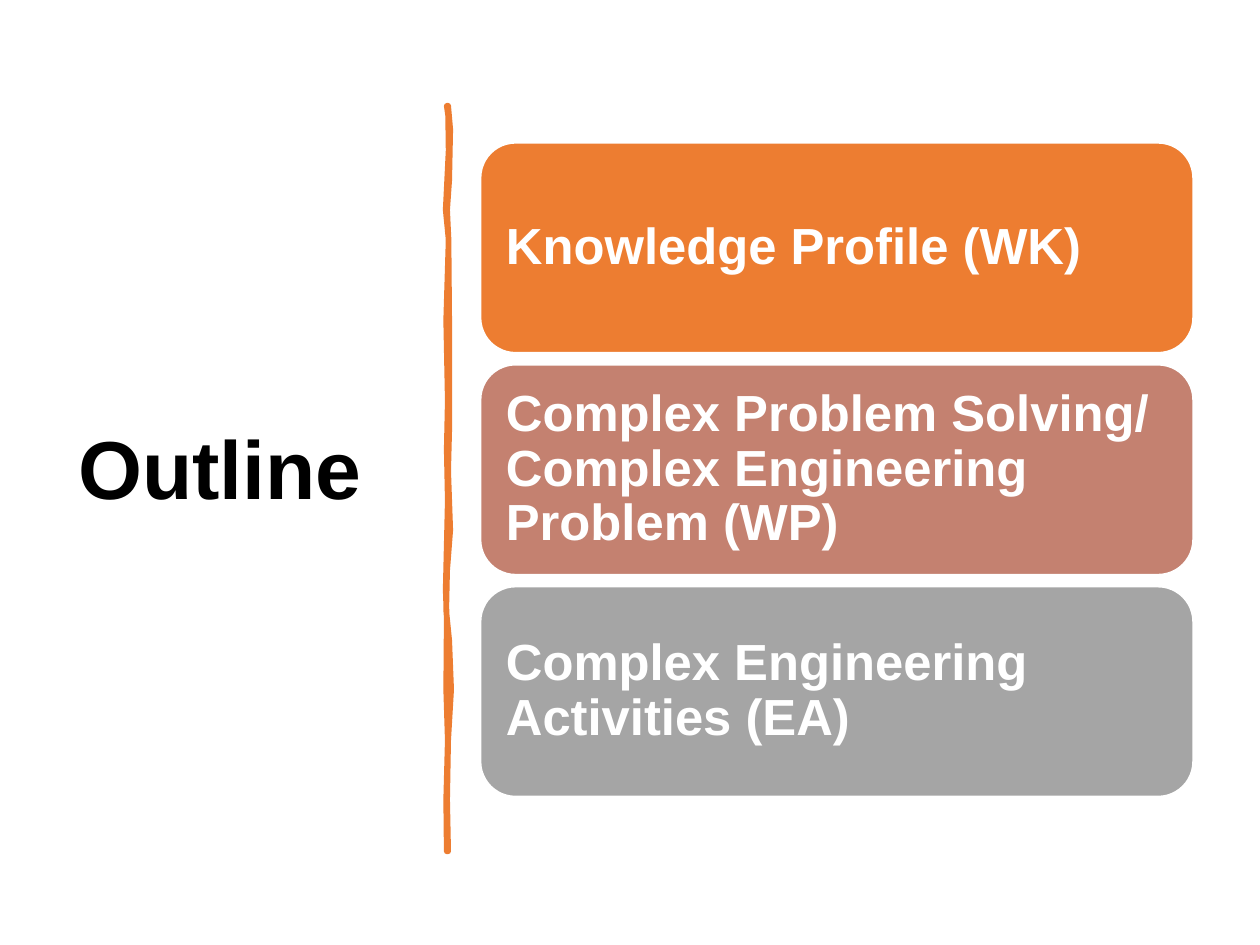
from pptx import Presentation
from pptx.dml.color import RGBColor
from pptx.enum.shapes import MSO_SHAPE
from pptx.enum.text import MSO_ANCHOR, MSO_AUTO_SIZE, PP_ALIGN
from pptx.util import Pt

ROUNDED = MSO_SHAPE.ROUNDED_RECTANGLE
MIDDLE = MSO_ANCHOR.MIDDLE
NO_FIT = MSO_AUTO_SIZE.NONE
LEFT = PP_ALIGN.LEFT

ORANGE = RGBColor(0xED, 0x7D, 0x31)
ROSE = RGBColor(0xC4, 0x81, 0x70)
GRAY = RGBColor(0xA5, 0xA5, 0xA5)
WHITE = RGBColor(0xFF, 0xFF, 0xFF)
BLACK = RGBColor(0, 0, 0)

TOPICS = [
    ("Knowledge Profile (WK)", ORANGE),
    ("Complex Problem Solving/ Complex Engineering Problem (WP)", ROSE),
    ("Complex Engineering Activities (EA)", GRAY),
]
BOX_LEFT, BOX_TOP, BOX_WIDTH, BOX_HEIGHT, BOX_PITCH = 274.6, 81.6, 407.2, 120, 126.8

RIGHT_EDGE = [
    (256.1, 60.5), (257.3, 74), (256.7, 103), (255.5, 120), (256.3, 137),
    (256.7, 183), (256.7, 246), (256.1, 269), (257.3, 303), (255.5, 326),
    (255, 349), (256.7, 366), (257.8, 394), (256.1, 423), (255.5, 457), (256.1, 486.5),
]
LEFT_EDGE = [
    (255.3, 486.5), (255, 457), (255.9, 423), (255, 394), (255.3, 354),
    (254.7, 337), (255.9, 286), (255.3, 257), (255.9, 229), (255, 183),
    (256.4, 137), (254.7, 120), (256.4, 86), (256.1, 66), (255.3, 60.5),
]


def write(tf, text, size, color, font="Arial", bold=True, align=LEFT, inset=None):
    tf.word_wrap = True
    tf.auto_size = NO_FIT
    tf.vertical_anchor = MIDDLE
    if inset is not None:
        tf.margin_left = tf.margin_right = tf.margin_top = tf.margin_bottom = Pt(inset)
    p = tf.paragraphs[0]
    p.alignment = align
    p.line_spacing = 0.9
    p.space_before = Pt(0)
    r = p.add_run()
    r.text = text
    r.font.name = font
    r.font.size = Pt(size)
    r.font.bold = bold
    r.font.color.rgb = color


class Deck:
    def __init__(self, prs):
        self.slide = prs.slides.add_slide(prs.slide_layouts[5])

    def style(self, sp, fill, line, width):
        sp.shadow.inherit = False
        sp.fill.solid()
        sp.fill.fore_color.rgb = fill
        sp.line.color.rgb = line
        sp.line.width = Pt(width)

    def title(self, text, left, top, width, height):
        sp = self.slide.shapes.title
        sp.left, sp.top, sp.width, sp.height = Pt(left), Pt(top), Pt(width), Pt(height)
        write(sp.text_frame, text, 47, BLACK)

    def brush_line(self, points, color):
        start, *rest = [(Pt(x), Pt(y)) for x, y in points]
        builder = self.slide.shapes.build_freeform(*start)
        builder.add_line_segments(rest, close=True)
        sp = builder.convert_to_shape()
        self.style(sp, color, color, 3.25)

    def box(self, text, color, left, top, width, height):
        sp = self.slide.shapes.add_shape(ROUNDED, Pt(left), Pt(top), Pt(width), Pt(height))
        self.style(sp, color, WHITE, 1)
        write(sp.text_frame, text, 29, WHITE, inset=8.64)


def main():
    prs = Presentation()
    prs.slide_width, prs.slide_height = Pt(720), Pt(540)
    deck = Deck(prs)
    deck.title("Outline", 37.5, 50.4, 201.6, 440)
    deck.brush_line(RIGHT_EDGE + LEFT_EDGE, ORANGE)
    for i, (text, color) in enumerate(TOPICS):
        deck.box(text, color, BOX_LEFT, BOX_TOP + i * BOX_PITCH, BOX_WIDTH, BOX_HEIGHT)
    prs.save("out.pptx")


if __name__ == "__main__":
    main()
